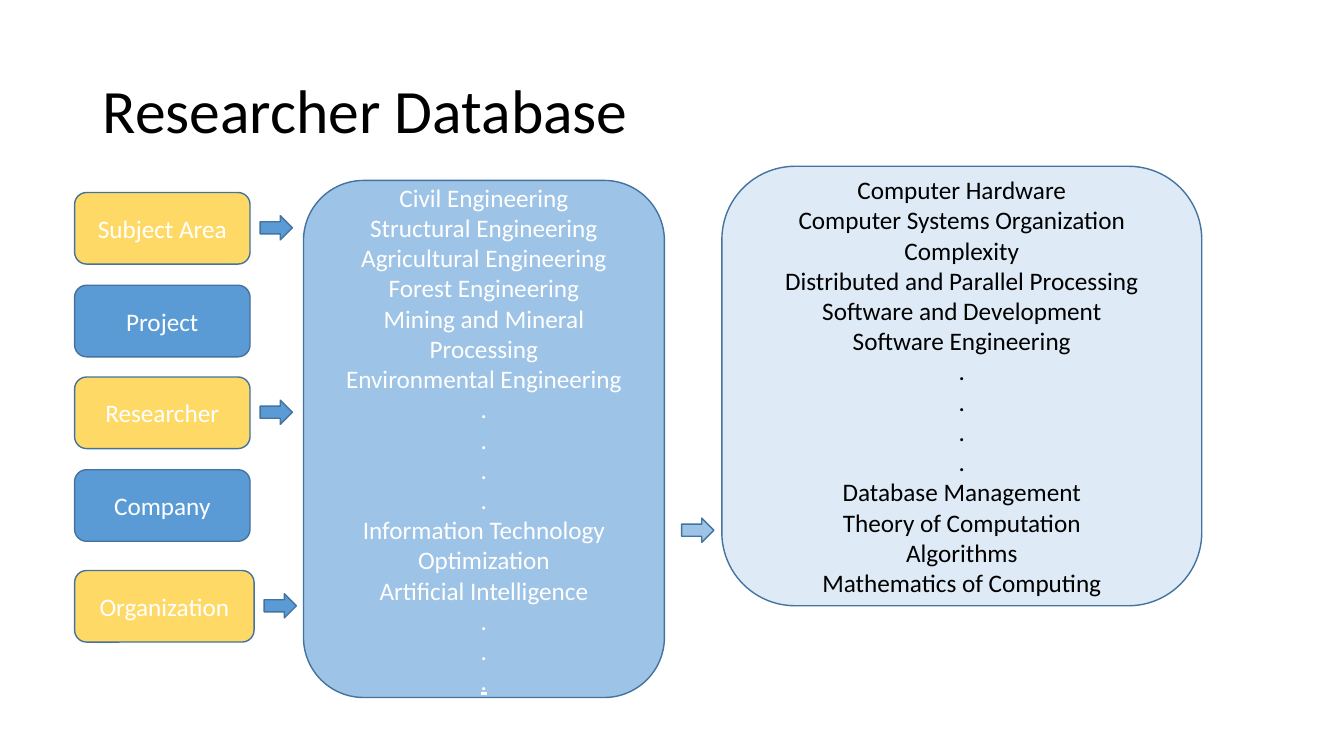
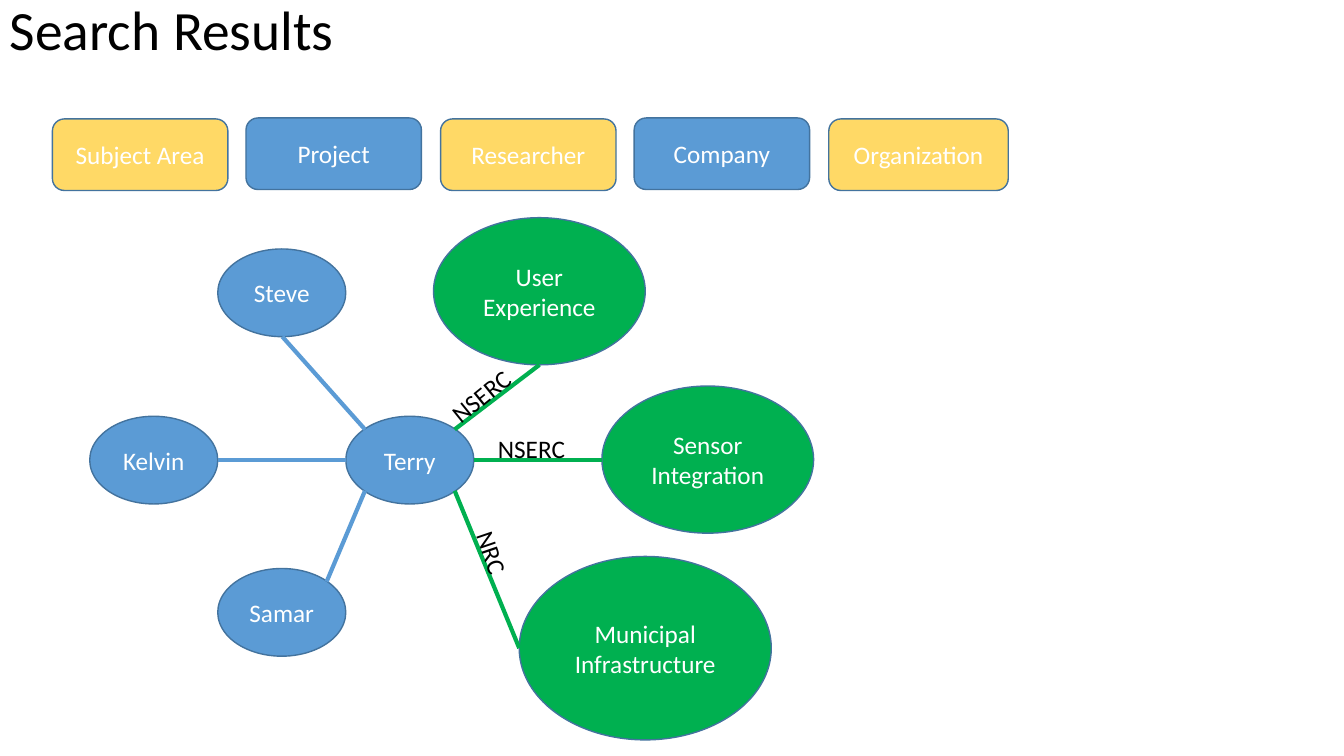
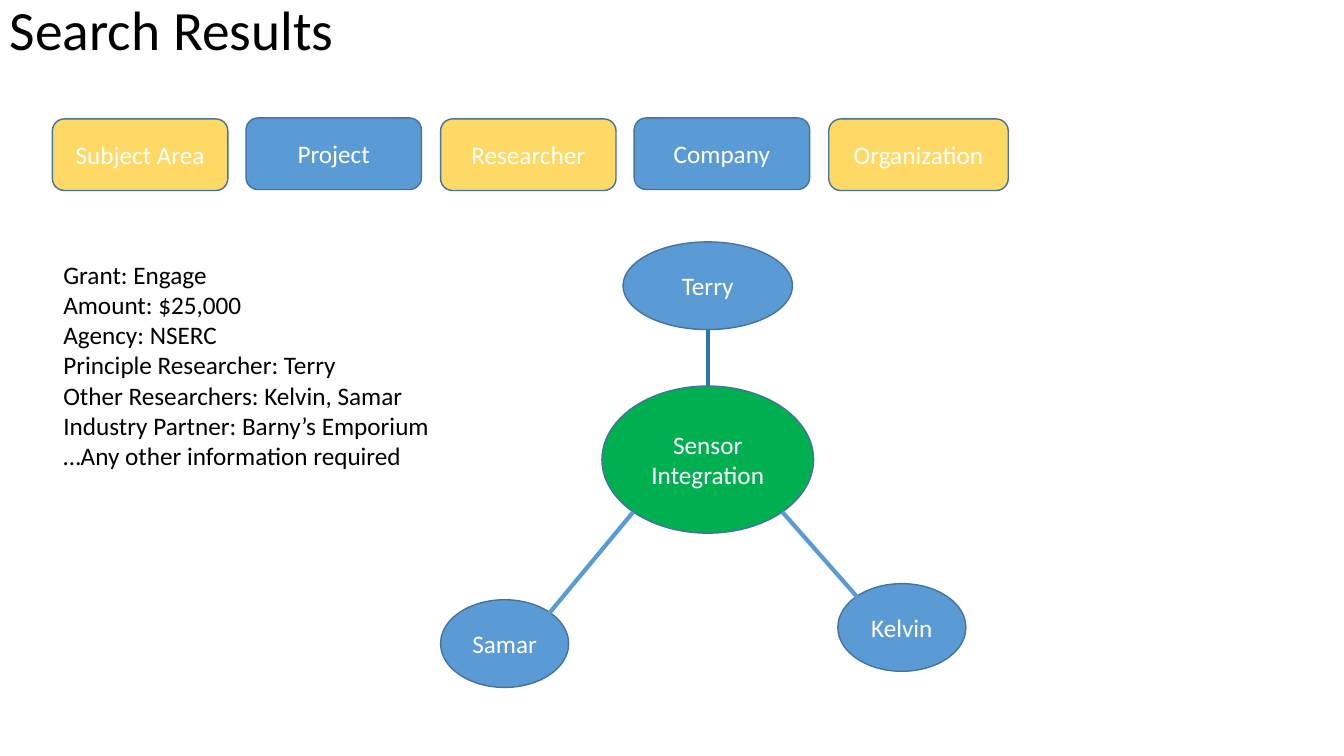
from dataclasses import dataclass
from math import sqrt

from lxml import etree
from pptx import Presentation, util as u
from pptx.dml.color import RGBColor
from pptx.enum import shapes, text
from pptx.oxml.ns import qn

PX = 9144  # 100 px to the inch
FONT = "Calibri"
BLUE, SKY, PALE, DEEP = "5B9BD5", "9DC3E6", "DEEBF7", "2E75B6"
GOLD, GREEN, EDGE = "FFD966", "00B050", "43739E"
WHITE, BLACK = "FFFFFF", "000000"

KIND = shapes.MSO_SHAPE
CARD, OVAL, ARROW = KIND.FLOWCHART_ALTERNATE_PROCESS, KIND.OVAL, KIND.RIGHT_ARROW
LEFT, MID = text.PP_ALIGN.LEFT, text.PP_ALIGN.CENTER

DIAG = 1 / sqrt(2)
SIDES = {"n": (0, -1), "s": (0, 1), "w": (-1, 0), "e": (1, 0),
         "nw": (-DIAG, -DIAG), "ne": (DIAG, -DIAG),
         "sw": (-DIAG, DIAG), "se": (DIAG, DIAG)}

DOT = "."
FIELDS = ["Civil Engineering", "Structural Engineering", "Agricultural Engineering",
          "Forest Engineering", "Mining and Mineral Processing",
          "Environmental Engineering", *[DOT] * 4, "Information Technology",
          "Optimization", "Artificial Intelligence", *[DOT] * 3]
TOPICS = ["Computer Hardware", "Computer Systems Organization", "Complexity",
          "Distributed and Parallel Processing", "Software and Development",
          "Software Engineering", *[DOT] * 4, "Database Management",
          "Theory of Computation", "Algorithms", "Mathematics of Computing"]
GRANT = ["Grant: Engage", "Amount: $25,000", "Agency: NSERC",
         "Principle Researcher: Terry", "Other Researchers: Kelvin, Samar",
         "Industry Partner: Barny’s Emporium", "…Any other information required"]


@dataclass(frozen=True)
class Box:
    x: int
    y: int
    w: int
    h: int


@dataclass(frozen=True)
class Tag:
    name: str
    fill: str
    w: int = 174


@dataclass(frozen=True)
class Node:
    name: str
    box: Box
    fill: str = BLUE

    def port(self, side: str) -> tuple[int, int]:
        """Point on the ellipse in a compass direction."""
        dx, dy = SIDES[side]
        box = self.box
        return (round(box.x + box.w / 2 * (1 + dx)),
                round(box.y + box.h / 2 * (1 + dy)))


@dataclass(frozen=True)
class Link:
    start: Node
    out: str
    end: Node
    into: str
    color: str = BLUE


@dataclass(frozen=True)
class Label:
    name: str
    x: int
    y: int
    turn: float = 0


TAGS = [Tag("Subject Area", GOLD), Tag("Project", BLUE), Tag("Researcher", GOLD),
        Tag("Company", BLUE), Tag("Organization", GOLD, 178)]
SENSOR = Node("Sensor Integration", Box(597, 383, 210, 146), GREEN)


def rgb(color: str) -> RGBColor:
    return RGBColor.from_string(color)


def emu(*sizes: int) -> list[int]:
    return [u.Emu(size * PX) for size in sizes]


def write(frame, lines: list[str], color: str, align=LEFT, size: float = 18) -> None:
    frame.word_wrap = True
    for i, line in enumerate(lines):
        para = frame.paragraphs[0] if i == 0 else frame.add_paragraph()
        para.text = line
        para.alignment = align
        font = para.font
        font.name, font.size, font.color.rgb = FONT, u.Pt(size), rgb(color)


def draw(slide, kind, box: Box, fill: str, lines: list[str] = (), color: str = WHITE):
    shape = slide.shapes.add_shape(kind, *emu(box.x, box.y, box.w, box.h))
    shape.shadow.inherit = False
    shape.fill.solid()
    shape.fill.fore_color.rgb = rgb(fill)
    shape.line.color.rgb = rgb(EDGE)
    shape.line.width = u.Pt(1)
    if lines:
        write(shape.text_frame, lines, color, MID)
    return shape


def note(slide, box: Box, lines: list[str], size: float = 18):
    shape = slide.shapes.add_textbox(*emu(box.x, box.y, box.w, box.h))
    write(shape.text_frame, lines, BLACK, size=size)
    return shape


def title(slide, box: Box, name: str, size: float) -> None:
    frame = note(slide, box, [name], size).text_frame
    frame.vertical_anchor = text.MSO_ANCHOR.MIDDLE
    frame.paragraphs[0].line_spacing = 0.9


def join(slide, link: Link) -> None:
    ends = link.start.port(link.out) + link.end.port(link.into)
    line = slide.shapes.add_connector(shapes.MSO_CONNECTOR.STRAIGHT, *emu(*ends))
    line.line.color.rgb = rgb(link.color)
    line.line.width = u.Pt(3)
    etree.SubElement(line._element.spPr, qn("a:effectLst"))


def graph(slide, nodes: list[Node], links: list[Link]) -> None:
    for node in nodes:
        draw(slide, OVAL, node.box, node.fill, [node.name])
    for link in links:
        join(slide, link)


def point(slide, x: int, y: int, fill: str) -> None:
    draw(slide, ARROW, Box(x, y, 32, 24), fill)


def result(slide) -> None:
    """Title and row of tags that both search slides share."""
    title(slide, Box(0, 0, 940, 64), "Search Results", 39.6)
    for i, tag in enumerate(TAGS):
        top = 118 if tag.fill == GOLD else 117
        box = Box(52 + i * 385 // 2, top, tag.w, 71)
        draw(slide, CARD, box, tag.fill, [tag.name])


def base(slide) -> None:
    title(slide, Box(92, 40, 1150, 145), "Researcher Database", 44)
    for tag, top in zip(TAGS, (191, 283, 374, 466, 566)):
        box = Box(74, top, tag.w, 71)
        draw(slide, CARD, box, tag.fill, [tag.name])
        if tag.fill == GOLD:
            point(slide, box.x + box.w + 10, top + 23, BLUE)
    fields = draw(slide, CARD, Box(301, 179, 358, 513), SKY, FIELDS)
    fields.text_frame.paragraphs[-1].font.underline = True
    point(slide, 676, 514, SKY)
    draw(slide, CARD, Box(716, 165, 476, 436), PALE, TOPICS, BLACK)


def people(slide) -> None:
    result(slide)
    steve = Node("Steve", Box(216, 247, 127, 87))
    terry = Node("Terry", Box(343, 413, 127, 87))
    kelvin = Node("Kelvin", Box(89, 413, 127, 87))
    samar = Node("Samar", Box(216, 564, 127, 87))
    user = Node("User Experience", Box(430, 216, 210, 146), GREEN)
    city = Node("Municipal Infrastructure", Box(515, 552, 250, 182), GREEN)
    graph(slide, [steve, terry, kelvin, samar, SENSOR, user, city], [
        Link(terry, "nw", steve, "s"),
        Link(terry, "sw", samar, "ne"),
        Link(terry, "w", kelvin, "e"),
        Link(terry, "e", SENSOR, "w", GREEN),
        Link(terry, "se", city, "w", GREEN),
        Link(terry, "ne", user, "s", GREEN),
    ])
    for label in (Label("NSERC", 433, 371, 321.1), Label("NSERC", 484, 425),
                  Label("NRC", 447, 542, 71.2)):
        shape = note(slide, Box(label.x, label.y, 92, 40), [label.name])
        shape.rotation = label.turn


def project(slide) -> None:
    result(slide)
    terry = Node("Terry", Box(618, 240, 168, 87))
    kelvin = Node("Kelvin", Box(831, 579, 127, 87))
    samar = Node("Samar", Box(437, 595, 127, 87))
    graph(slide, [terry, kelvin, samar, SENSOR], [
        Link(SENSOR, "sw", samar, "ne"),
        Link(SENSOR, "se", kelvin, "nw"),
        Link(terry, "s", SENSOR, "n", DEEP),
    ])
    note(slide, Box(53, 252, 384, 222), GRANT)


def main() -> None:
    deck = Presentation()
    deck.slide_width, deck.slide_height = emu(1333, 750)
    for build in (base, people, project):
        build(deck.slides.add_slide(deck.slide_layouts[6]))
    deck.save("out.pptx")


if __name__ == "__main__":
    main()
